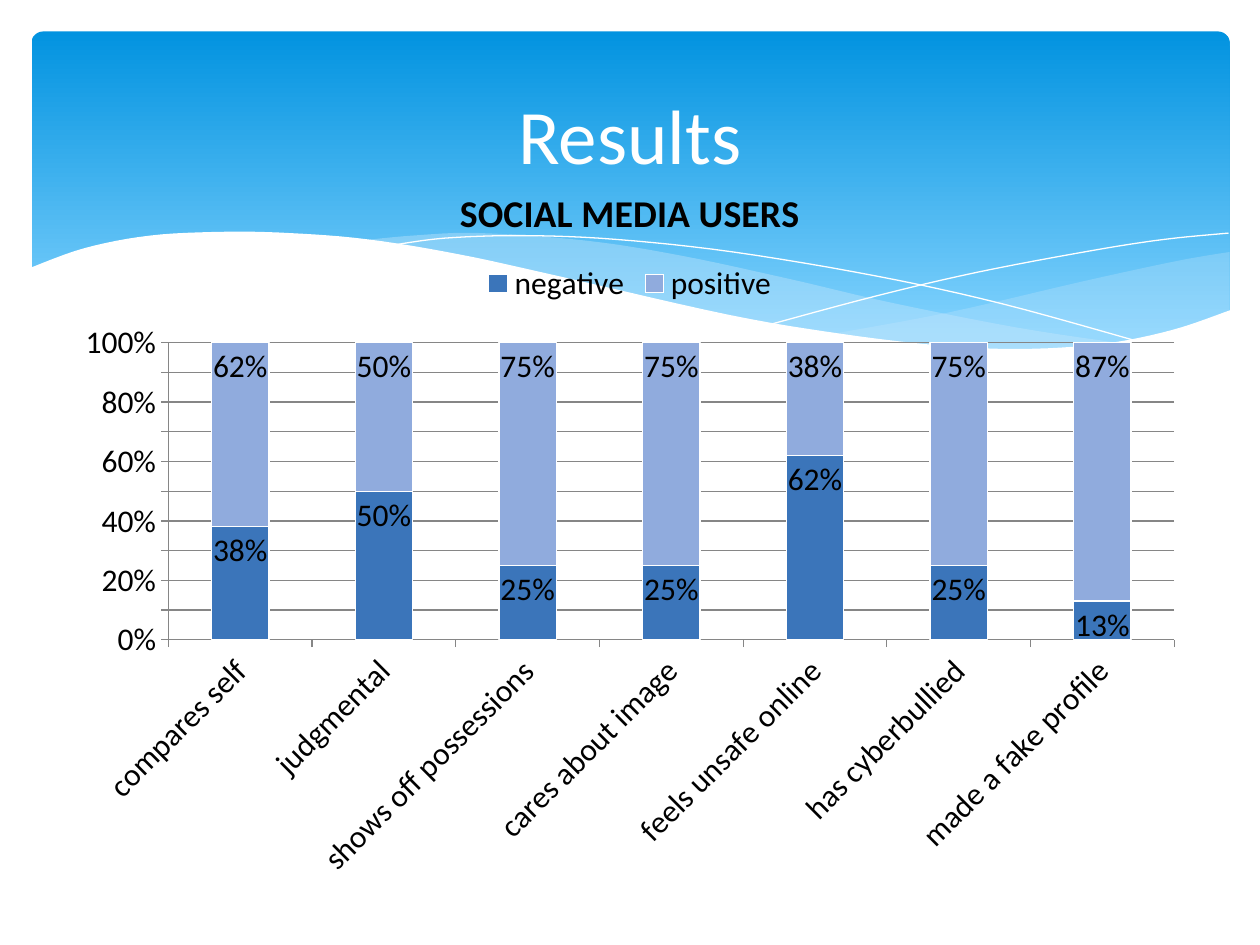
from lxml import etree
from pptx import Presentation
from pptx.chart.data import CategoryChartData
from pptx.dml.color import RGBColor
from pptx.enum.chart import XL_CHART_TYPE, XL_LABEL_POSITION, XL_LEGEND_POSITION, XL_TICK_MARK
from pptx.enum.shapes import MSO_SHAPE
from pptx.enum.text import MSO_ANCHOR, PP_ALIGN
from pptx.oxml import parse_xml
from pptx.oxml.ns import nsdecls, qn
from pptx.util import Inches, Pt

COLORS = {name: RGBColor.from_string(value) for name, value in {
    "sky": "0293E0", "pale sky": "83D3FE", "mist": "C6E7FC", "white": "FFFFFF",
    "black": "000000", "grid": "868686", "negative": "3B75BA", "positive": "90ABDD",
}.items()}
FONT = "Calibri"

deck = Presentation()
deck.slide_width, deck.slide_height = Inches(10), Inches(7.5)
width, height = deck.slide_width, deck.slide_height
slide = deck.slides.add_slide(deck.slide_layouts[5])


def smooth_curve(knots, steps=6):
    ends = [knots[0], *knots, knots[-1]]
    points = [knots[0]]
    for a, b, c, d in zip(ends, ends[1:], ends[2:], ends[3:]):
        for step in range(1, steps + 1):
            t = step / steps
            points.append(tuple(
                (2 * q + (r - p) * t + (2 * p - 5 * q + 4 * r - s) * t ** 2
                 + (3 * q - p - 3 * r + s) * t ** 3) / 2
                for p, q, r, s in zip(a, b, c, d)))
    return points


def add_wave(points, closed):
    lengths = [(Inches(x), Inches(y)) for x, y in points]
    builder = slide.shapes.build_freeform(*lengths[0], scale=1.0)
    builder.add_line_segments(lengths[1:], close=closed)
    wave = builder.convert_to_shape()
    wave.shadow.inherit = False
    return wave


banner = slide.shapes.add_shape(
    MSO_SHAPE.ROUNDED_RECTANGLE, int(width * 0.025), int(height / 30), int(width * 0.951), int(height * 0.36))
banner.adjustments[0] = 0.034
banner.shadow.inherit = False
banner.line.fill.background()
banner.fill.gradient()
banner.fill.gradient_angle = 270
for stop, shade, position in zip(banner.fill.gradient_stops, ("sky", "pale sky"), (0, 0.9)):
    stop.color.rgb = COLORS[shade]
    stop.position = position

right_swell = (
    smooth_curve([(9.76, 2), (9.35, 2.07), (8.61, 2.23), (7.53, 2.48), (6.61, 2.65)])
    + smooth_curve([(6.61, 2.65), (7.19, 2.72), (7.81, 2.77), (8.35, 2.77), (8.81, 2.73), (9.28, 2.63), (9.76, 2.47)]))
long_swell = (
    smooth_curve([(8.93, 2.73), (8.07, 2.6), (7.06, 2.4), (6.29, 2.22), (5.41, 2.03), (4.65, 1.91),
                  (3.8, 1.85), (3.28, 1.87), (2.86, 1.91)])
    + smooth_curve([(2.86, 1.91), (3.62, 2.03), (4.49, 2.22), (5.66, 2.48), (6.5, 2.64), (7.22, 2.74),
                    (7.96, 2.78), (8.48, 2.77), (8.93, 2.73)]))
for swell, opacity in ((right_swell, 29), (long_swell, 40)):
    wave = add_wave(swell, True)
    wave.fill.solid()
    wave.fill.fore_color.rgb = COLORS["mist"]
    wave.line.fill.background()
    tint = wave.element.spPr.find(qn("a:solidFill"))[0]
    etree.SubElement(tint, qn("a:alpha"), val=str(opacity * 1000))

for crest in (
    [(3.09, 1.95), (3.53, 1.89), (4.16, 1.87), (4.89, 1.9), (5.82, 2), (6.95, 2.19), (7.95, 2.41), (9.07, 2.72)],
    [(6.13, 2.57), (6.95, 2.35), (7.76, 2.16), (8.66, 1.99), (9.24, 1.9), (9.75, 1.85)],
):
    wave = add_wave(smooth_curve(crest), False)
    wave.fill.background()
    wave.line.color.rgb = COLORS["white"]
    wave.line.width = Pt(0)

foreground = smooth_curve([
    (9.77, 2.46), (9.3, 2.62), (8.75, 2.73), (8.09, 2.77), (7.44, 2.74), (6.68, 2.65), (5.79, 2.5),
    (4.47, 2.2), (3.65, 2.02), (2.92, 1.9), (2.3, 1.85), (1.77, 1.84), (1.19, 1.87), (0.67, 1.97), (0.23, 2.13)])
wave = add_wave(foreground + [(0.23, 3.29), (9.77, 3.29)], True)
wave.fill.solid()
wave.fill.fore_color.rgb = COLORS["white"]
wave.line.fill.background()

answers = CategoryChartData(number_format="0%")
answers.categories = [
    "compares self", "judgmental", "shows off possessions", "cares about image",
    "feels unsafe online", "has cyberbullied", "made a fake profile"]
answers.add_series("negative", (0.38, 0.5, 0.25, 0.25, 0.62, 0.25, 0.13))
answers.add_series("positive", (0.62, 0.5, 0.75, 0.75, 0.38, 0.75, 0.87))
chart = slide.shapes.add_chart(
    XL_CHART_TYPE.COLUMN_STACKED_100, int(width * 0.05), int(height / 6),
    int(width * 0.9), int(height * 0.777), answers).chart
chart.font.name = FONT
chart.font.size = Pt(18)
chart.font.color.rgb = COLORS["black"]

chart.has_title = True
chart.chart_title.include_in_layout = False
chart.chart_title.text_frame.text = "SOCIAL MEDIA USERS"
heading = chart.chart_title.text_frame.paragraphs[0].runs[0].font
heading.name, heading.size, heading.bold = FONT, Pt(21.6), True
heading.color.rgb = COLORS["black"]

chart.has_legend = True
chart.legend.position = XL_LEGEND_POSITION.TOP
chart.legend.include_in_layout = False

bars = chart.plots[0]
bars.gap_width, bars.overlap, bars.vary_by_categories = 150, 100, False
for series in bars.series:
    series.format.fill.solid()
    series.format.fill.fore_color.rgb = COLORS[series.name]
    series.format.line.color.rgb = COLORS["white"]
    series.format.line.width = Pt(0.75)
    labels = series.data_labels
    labels.show_value = True
    labels.position = XL_LABEL_POSITION.INSIDE_END
    labels.number_format, labels.number_format_is_linked = "0%", False

shares = chart.value_axis
shares.minimum_scale, shares.maximum_scale, shares.major_unit = 0, 1, 0.1
shares.tick_labels.number_format, shares.tick_labels.number_format_is_linked = "0%", False
shares.has_major_gridlines = True
shares.major_gridlines.format.line.color.rgb = COLORS["grid"]
for axis in (chart.category_axis, shares):
    axis.major_tick_mark = XL_TICK_MARK.OUTSIDE
    axis.format.line.color.rgb = COLORS["grid"]
    axis.tick_labels.font.size = Pt(18)
chart.element.xpath(".//c:catAx/c:txPr/a:bodyPr")[0].set("rot", "-2700000")

plot_area = chart.element.xpath(".//c:plotArea")[0]
for automatic in plot_area.findall(qn("c:layout")):
    plot_area.remove(automatic)
plot_area.insert(0, parse_xml(
    f'<c:layout {nsdecls("c")}><c:manualLayout><c:layoutTarget val="inner"/>'
    '<c:xMode val="edge"/><c:yMode val="edge"/><c:x val="0.093"/><c:y val="0.252"/>'
    '<c:w val="0.887"/><c:h val="0.405"/></c:manualLayout></c:layout>'))

title = slide.shapes.title
title.element.getparent().append(title.element)
title.left, title.top = int(width * 0.05), int(height * 0.05)
title.width, title.height = int(width * 0.9), int(height * 0.183)
title.text_frame.text = "Results"
title.text_frame.vertical_anchor = MSO_ANCHOR.MIDDLE
headline = title.text_frame.paragraphs[0]
headline.alignment = PP_ALIGN.CENTER
headline.runs[0].font.name = FONT
headline.runs[0].font.size = Pt(44)
headline.runs[0].font.color.rgb = COLORS["white"]

deck.save("out.pptx")
